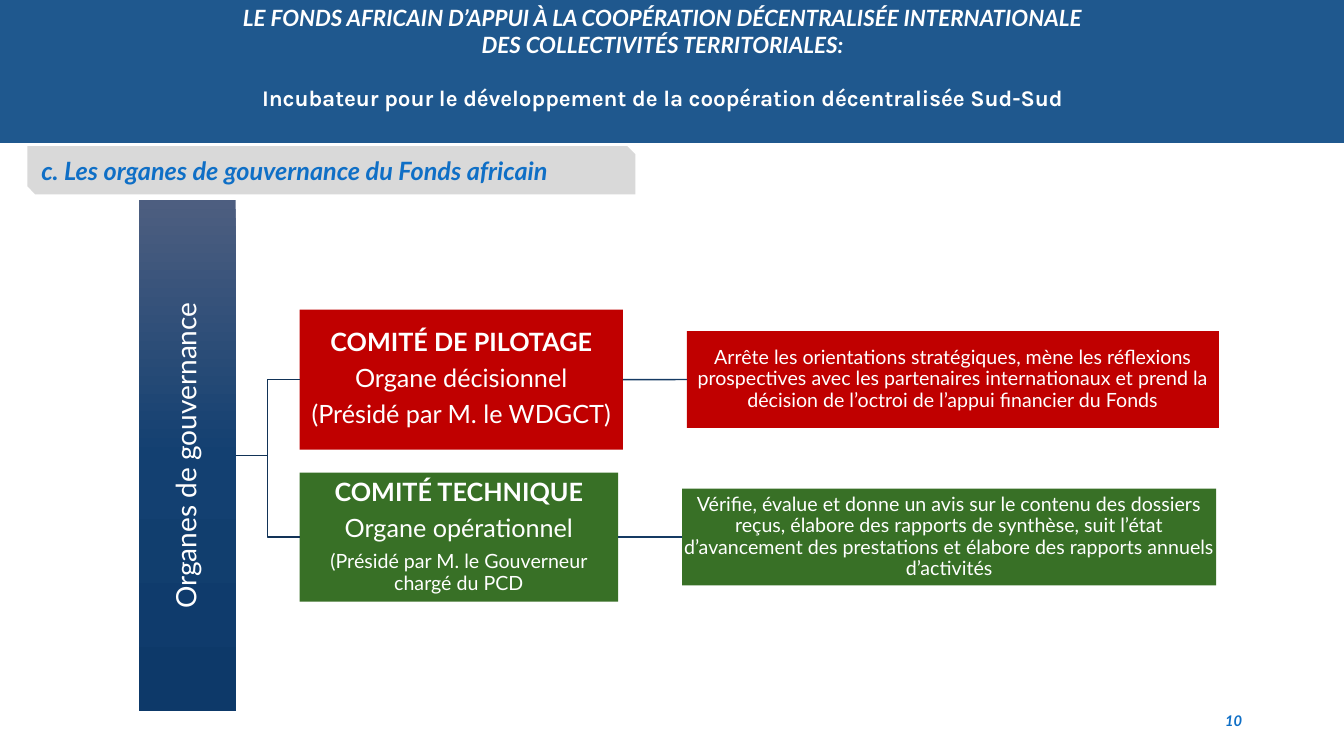
from copy import deepcopy

from lxml import etree
from pptx import Presentation
from pptx.dml.color import RGBColor
from pptx.enum.shapes import MSO_CONNECTOR, MSO_SHAPE
from pptx.enum.text import MSO_ANCHOR, PP_ALIGN
from pptx.oxml.ns import qn
from pptx.util import Cm, Pt

RECTANGLE, SNIPPED = MSO_SHAPE.RECTANGLE, MSO_SHAPE.SNIP_2_DIAG_RECTANGLE
STRAIGHT, ELBOW = MSO_CONNECTOR.STRAIGHT, MSO_CONNECTOR.ELBOW
TOP, MIDDLE = MSO_ANCHOR.TOP, MSO_ANCHOR.MIDDLE
LEFT, CENTER, RIGHT = PP_ALIGN.LEFT, PP_ALIGN.CENTER, PP_ALIGN.RIGHT
LEFT_SITE, RIGHT_SITE = 1, 3

WIDTH, HEIGHT = 33.87, 19.05
WHITE, BLUE = "FFFFFF", "0F6FC6"
COLUMN_GAP = 1.61
DUTY_HEIGHT = 2.44
PILLAR_STOPS = [(0, "4D5E80"), (0.5, "134071"), (1, "0D3969")]

# Committee top, width, height; duty width; colour; (text, size, bold) lines; duty
COMMITTEES = [
    (7.8, 8.15, 3.53, 13.41, "C00000",
     [("COMITÉ DE PILOTAGE", 18, True),
      ("Organe décisionnel", 18, False),
      ("(Présidé par M. le WDGCT)", 18, False)],
     "Arrête les orientations stratégiques, mène les réflexions prospectives "
     "avec les partenaires internationaux et prend la décision de l’octroi de "
     "l’appui financier du Fonds"),
    (11.91, 8.03, 3.25, 13.46, "387026",
     [("COMITÉ TECHNIQUE", 18, True),
      ("Organe opérationnel", 18, False),
      ("(Présidé par M. le Gouverneur chargé du PCD", 14, False)],
     "Vérifie, évalue et donne un avis sur le contenu des dossiers reçus, "
     "élabore des rapports de synthèse, suit l’état d’avancement des "
     "prestations et élabore des rapports annuels d’activités"),
]


def color(code):
    return RGBColor.from_string(code)


def add_block(page, box, fill=None, kind=RECTANGLE):
    shape = page.shapes.add_shape(kind, *(Cm(value) for value in box))
    shape.shadow.inherit = False
    shape.line.fill.background()
    if fill:
        shape.fill.solid()
        shape.fill.fore_color.rgb = color(fill)
    return shape


def set_frame(shape, anchor=MIDDLE, inset=None):
    frame = shape.text_frame
    frame.word_wrap = True
    frame.vertical_anchor = anchor
    if inset is not None:
        frame.margin_left = frame.margin_right = Cm(inset)
        frame.margin_top = frame.margin_bottom = Cm(inset)
    return frame


def add_span(para, text, size, code=WHITE, bold=False, italic=False, face="Lato"):
    span = para.add_run()
    span.text = text
    font = span.font
    font.name, font.size, font.bold, font.italic = face, Pt(size), bold, italic
    font.color.rgb = color(code)


def write_node(shape, lines):
    frame = set_frame(shape, inset=0.03)
    for index, (text, size, bold) in enumerate(lines):
        para = frame.add_paragraph() if index else frame.paragraphs[0]
        para.alignment = CENTER
        para.line_spacing = 0.9
        para.space_after = Pt(round(size * 0.35, 1))
        add_span(para, text, size, bold=bold)


def join(page, kind, start, end, code):
    link = page.shapes.add_connector(kind, 0, 0, 0, 0)
    link.begin_connect(start, RIGHT_SITE)
    link.end_connect(end, LEFT_SITE)
    link.line.color.rgb = color(code)
    link.line.width = Pt(1)
    etree.SubElement(link._element.spPr, qn("a:effectLst"))


def add_banner(page, left, top, width, height):
    add_block(page, (left, top, width, height), "1F588E")
    title = page.shapes.add_textbox(
        Cm(left + 3.4), Cm(top + 0.1), Cm(26.6), Cm(height - 0.2))
    frame = set_frame(title, TOP, 0)
    para = frame.paragraphs[0]
    para.alignment = CENTER
    add_span(para, "LE FONDS AFRICAIN D’APPUI À LA COOPÉRATION DÉCENTRALISÉE "
             "INTERNATIONALE", 16, bold=True, italic=True)
    para.add_line_break()
    add_span(para, "DES COLLECTIVITÉS TERRITORIALES:", 16, bold=True, italic=True)
    para = frame.add_paragraph()
    para.alignment = CENTER
    para.space_before = Pt(19.2)
    add_span(para, "Incubateur pour le développement de la coopération "
             "décentralisée Sud-Sud", 16, bold=True, face="Karla")


def add_heading(page, *box):
    para = set_frame(add_block(page, box, "D9D9D9", SNIPPED)).paragraphs[0]
    para.alignment = LEFT
    add_span(para, "c. Les organes de gouvernance du Fonds africain", 18,
             BLUE, bold=True, italic=True)


def add_pillar(page, *box):
    pillar = add_block(page, box)
    pillar.fill.gradient()
    pillar.fill.gradient_angle = 270
    # A third gradient stop between the two default ones
    stops = pillar._element.spPr.find(qn("a:gradFill")).find(qn("a:gsLst"))
    stops.insert(1, deepcopy(stops[0]))
    for stop, (position, code) in zip(pillar.fill.gradient_stops, PILLAR_STOPS):
        stop.position = position
        stop.color.rgb = color(code)
    write_node(pillar, [("Organes de gouvernance", 20, False)])
    # Text reads from bottom to top
    pillar.text_frame._txBody.find(qn("a:bodyPr")).set("vert", "vert270")
    return pillar


def add_governance(page, left, top, width, height):
    pillar = add_pillar(page, left, top, width, height)
    committee_left = left + width + COLUMN_GAP
    for row, breadth, depth, duty_width, fill, lines, duty_text in COMMITTEES:
        committee = add_block(page, (committee_left, row, breadth, depth), fill)
        write_node(committee, lines)
        duty_left = committee_left + breadth + COLUMN_GAP
        duty_top = row + (depth - DUTY_HEIGHT) / 2
        duty = add_block(page, (duty_left, duty_top, duty_width, DUTY_HEIGHT), fill)
        write_node(duty, [(duty_text, 14, False)])
        join(page, ELBOW, pillar, committee, "123357")
        join(page, STRAIGHT, committee, duty, "153A63")


def add_page_number(page, *box):
    shape = page.shapes.add_textbox(*(Cm(value) for value in box))
    para = set_frame(shape).paragraphs[0]
    para.alignment = RIGHT
    add_span(para, "10", 10.5, BLUE, bold=True, italic=True)


def main():
    deck = Presentation()
    deck.slide_width, deck.slide_height = Cm(WIDTH), Cm(HEIGHT)
    page = deck.slides.add_slide(deck.slide_layouts[6])
    add_banner(page, 0, 0, WIDTH, 3.6)
    add_heading(page, 0.69, 3.68, 15.32, 1.22)
    add_governance(page, 3.5, 5.04, 2.44, 12.88)
    add_page_number(page, 23.93, 17.65, 7.62, 1.02)
    deck.save("out.pptx")


if __name__ == "__main__":
    main()
